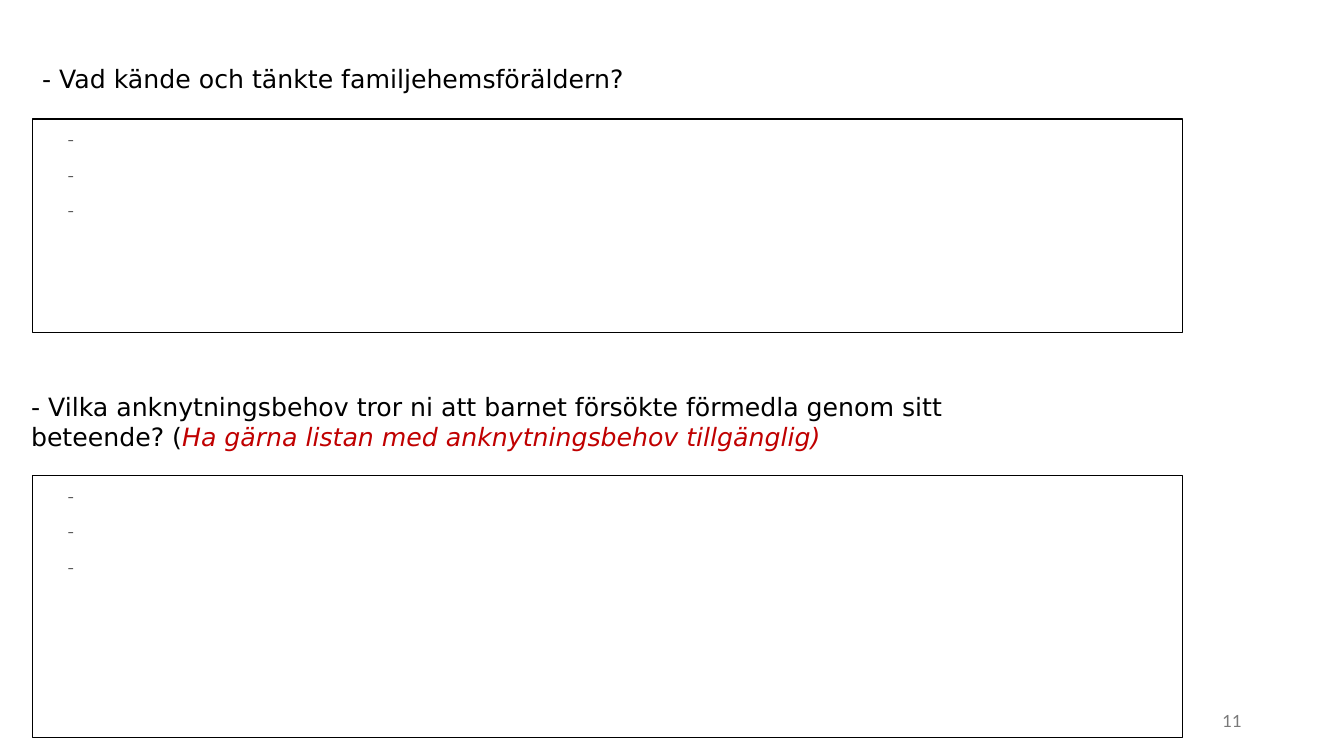
from pptx import Presentation
from pptx.dml.color import RGBColor
from pptx.enum.shapes import MSO_SHAPE
from pptx.enum.text import MSO_ANCHOR, PP_ALIGN
from pptx.util import Pt

RECTANGLE = MSO_SHAPE.RECTANGLE
TOP, MIDDLE = MSO_ANCHOR.TOP, MSO_ANCHOR.MIDDLE
LEFT, RIGHT = PP_ALIGN.LEFT, PP_ALIGN.RIGHT

BLACK = RGBColor(0x00, 0x00, 0x00)
WHITE = RGBColor(0xFF, 0xFF, 0xFF)
RED = RGBColor(0xC0, 0x00, 0x00)
DARK_GRAY = RGBColor(0x59, 0x59, 0x59)
GRAY = RGBColor(0x79, 0x79, 0x79)

# Content: frames are (left, top, width, height) in points
QUESTIONS = [
    ((23, 41.8, 850, 29), 0,
     [("- Vad kände och tänkte familjehemsföräldern?", BLACK, False)]),
    ((15.1, 275.8, 748, 83), 10,
     [("- Vilka anknytningsbehov tror ni att barnet försökte förmedla "
       "genom sitt beteende? (", BLACK, False),
      ("Ha gärna listan med anknytningsbehov tillgänglig)", RED, True)]),
]
ANSWER_LEFT, ANSWER_WIDTH = 23, 821.5
ANSWER_BOXES = [(85, 152.6), (339.8, 187.2)]  # top, height
ANSWER_LINES = ["-", "-", "-"]
PAGE_NUMBER = "11"
PAGE_NUMBER_FRAME = (678.2, 500.4, 216, 28.8)


def add_run(paragraph, text, font_name, size, color, italic=False):
    run = paragraph.add_run()
    run.text = text
    run.font.name = font_name
    run.font.size = Pt(size)
    run.font.color.rgb = color
    run.font.italic = italic


def add_text_box(slide, frame, anchor=TOP):
    text_frame = slide.shapes.add_textbox(*map(Pt, frame)).text_frame
    text_frame.word_wrap = True
    text_frame.vertical_anchor = anchor
    return text_frame.paragraphs[0]


def add_answer_box(slide, top, height):
    shape = slide.shapes.add_shape(
        RECTANGLE, Pt(ANSWER_LEFT), Pt(top), Pt(ANSWER_WIDTH), Pt(height))
    shape.shadow.inherit = False
    shape.fill.solid()
    shape.fill.fore_color.rgb = WHITE
    shape.line.color.rgb = BLACK
    shape.line.width = Pt(0.75)
    text_frame = shape.text_frame
    text_frame.word_wrap = True
    text_frame.vertical_anchor = TOP
    for index, line in enumerate(ANSWER_LINES):
        paragraph = text_frame.add_paragraph() if index else text_frame.paragraphs[0]
        paragraph.alignment = LEFT
        paragraph.line_spacing = 1.07
        paragraph.space_after = Pt(6)
        # Hanging indent
        properties = paragraph._p.get_or_add_pPr()
        properties.set("marL", str(Pt(36)))
        properties.set("indent", str(Pt(-18)))
        add_run(paragraph, line, "Cambria", 15, DARK_GRAY)


def main():
    presentation = Presentation()
    presentation.slide_width, presentation.slide_height = Pt(960), Pt(540)
    slide = presentation.slides.add_slide(presentation.slide_layouts[6])

    # Questions
    for frame, space_after, runs in QUESTIONS:
        paragraph = add_text_box(slide, frame)
        paragraph.space_after = Pt(space_after)
        for text, color, italic in runs:
            add_run(paragraph, text, "DejaVu Sans", 18, color, italic)

    # Answer boxes
    for top, height in ANSWER_BOXES:
        add_answer_box(slide, top, height)

    # Page number
    paragraph = add_text_box(slide, PAGE_NUMBER_FRAME, MIDDLE)
    paragraph.alignment = RIGHT
    add_run(paragraph, PAGE_NUMBER, "Lato", 12, GRAY)

    presentation.save("out.pptx")


if __name__ == "__main__":
    main()
